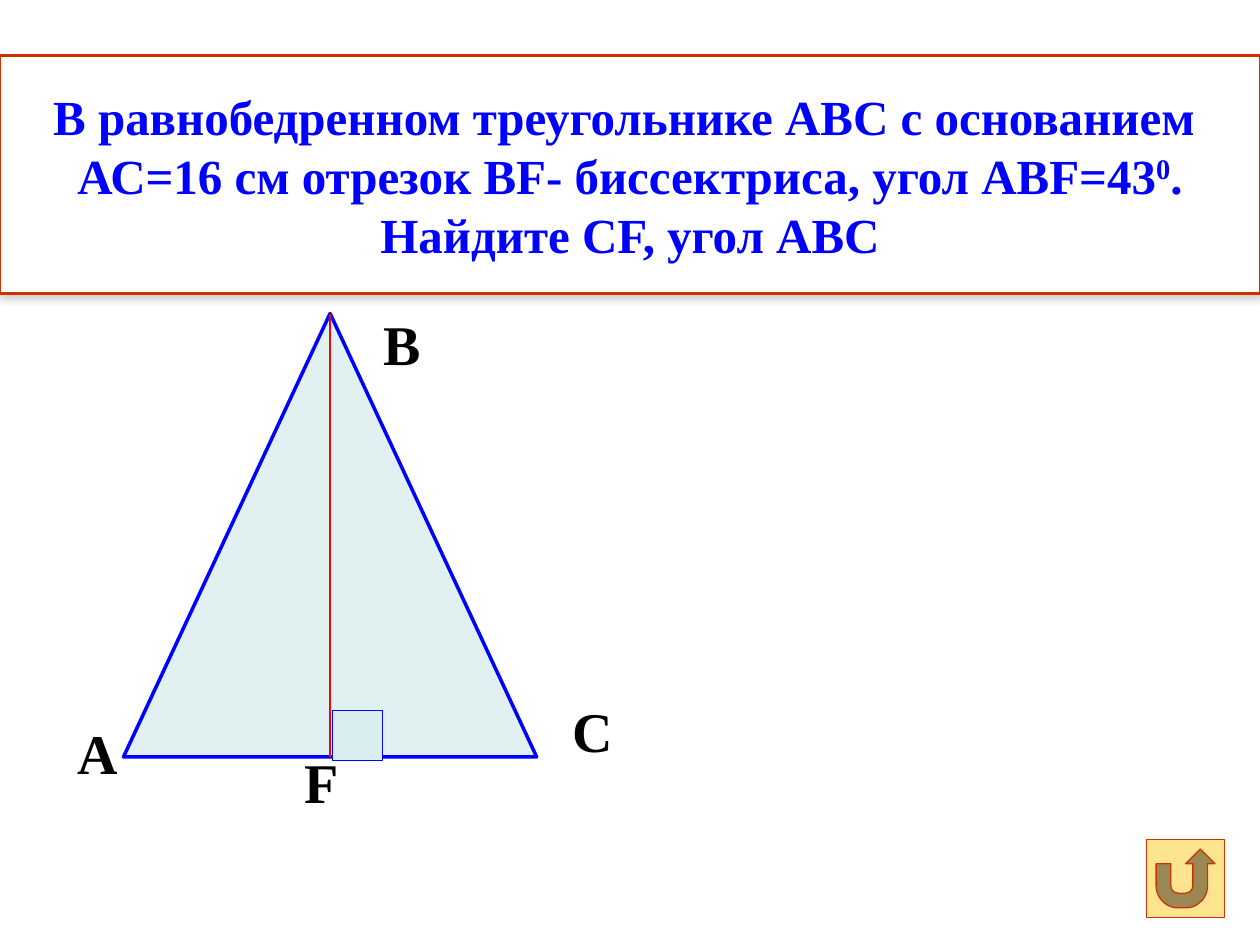
from typing import NamedTuple

from lxml.etree import SubElement
from pptx import Presentation
from pptx.dml.color import RGBColor
from pptx.enum.shapes import MSO_CONNECTOR as Connector, MSO_SHAPE as Preset
from pptx.enum.text import MSO_ANCHOR as Anchor, MSO_AUTO_SIZE as AutoSize, PP_ALIGN as Align
from pptx.oxml import parse_xml
from pptx.oxml.ns import nsdecls, qn
from pptx.util import Cm, Pt

FONT = "Times New Roman"
BLUE, RUST, RED, BLACK, WHITE = "0000FF", "CC3300", "FF0000", "000000", "FFFFFF"
SHADOW = (
    f'<a:effectLst {nsdecls("a")}><a:outerShdw blurRad="63500" dist="20320" dir="5400000" '
    'algn="ctr" rotWithShape="0"><a:srgbClr val="808080"><a:alpha val="38000"/></a:srgbClr>'
    "</a:outerShdw></a:effectLst>"
)


class Box(NamedTuple):
    left: float
    top: float
    width: float
    height: float


class Figure(NamedTuple):
    preset: Preset
    box: Box
    fill: str
    line: str
    weight: float
    opacity: int = 100


class Label(NamedTuple):
    text: str
    box: Box


TRIANGLE = Box(2.49, 6.32, 8.33, 8.94)
FIGURES = [
    Figure(Preset.ACTION_BUTTON_RETURN, Box(23.11, 16.92, 1.58, 1.58), "FFE48F", RUST, 0.75),
    Figure(Preset.ISOSCELES_TRIANGLE, TRIANGLE, "BBE0E3", BLUE, 2, 44),
]
RIGHT_ANGLE = Figure(Preset.RECTANGLE, Box(6.71, 14.33, 1, 1), "DAEDEF", BLUE, 0.75)
LABELS = [
    Label("F", Box(5.89, 14.94, 1.19, 1.63)),
    Label("С", Box(11.3, 13.92, 1.35, 1.63)),
    Label("В", Box(7.49, 6.12, 1.27, 1.63)),
    Label("А", Box(1.32, 14.35, 1.35, 1.63)),
]
PROBLEM = [
    ["В равнобедренном треугольнике АВС с основанием "],
    ["АС=16 см отрезок ВF- биссектриса, угол АВF=43", "0", "."],
    ["Найдите СF, угол АВС"],
]


def color(value: str) -> RGBColor:
    """Turn a hex string into a colour."""
    return RGBColor.from_string(value)


def paint(shape, fill: str, line: str, weight: float) -> None:
    """Give a shape a solid fill and an outline."""
    shape.fill.solid()
    shape.fill.fore_color.rgb = color(fill)
    shape.line.color.rgb = color(line)
    shape.line.width = Pt(weight)


def set_font(paragraph, size: float, value: str) -> None:
    """Set the bold serif font of a paragraph."""
    paragraph.font.name = FONT
    paragraph.font.size = Pt(size)
    paragraph.font.bold = True
    paragraph.font.color.rgb = color(value)


def write_problem(title) -> None:
    """Place and fill the framed problem statement."""
    title.left, title.top, title.width, title.height = map(Cm, Box(0, 1.12, 25.4, 4.8))
    paint(title, WHITE, RUST, 1.5)
    title._element.spPr.append(parse_xml(SHADOW))
    frame = title.text_frame
    frame.word_wrap = True
    frame.auto_size = AutoSize.NONE
    frame.vertical_anchor = Anchor.MIDDLE
    frame.margin_left = frame.margin_right = Cm(0.28)
    frame.margin_top = frame.margin_bottom = Cm(0.15)
    for index, pieces in enumerate(PROBLEM):
        paragraph = frame.paragraphs[0] if index == 0 else frame.add_paragraph()
        paragraph.alignment = Align.CENTER
        set_font(paragraph, 28, BLUE)
        for piece in pieces:
            run = paragraph.add_run()
            run.text = piece
            if piece == "0":
                run._r.get_or_add_rPr().set("baseline", "30000")


def draw_figure(slide, figure: Figure) -> None:
    """Draw one preset shape."""
    shape = slide.shapes.add_shape(figure.preset, *map(Cm, figure.box))
    shape.shadow.inherit = False
    paint(shape, figure.fill, figure.line, figure.weight)
    if figure.opacity < 100:
        fill_color = shape._element.spPr.find(qn("a:solidFill"))[0]
        SubElement(fill_color, qn("a:alpha")).set("val", str(figure.opacity * 1000))


def draw_bisector(slide, triangle: Box) -> None:
    """Draw the line from the apex to the middle of the base."""
    middle = Cm(triangle.left + triangle.width / 2)
    bottom = Cm(triangle.top + triangle.height)
    line = slide.shapes.add_connector(
        Connector.STRAIGHT, middle, Cm(triangle.top), middle, bottom
    )
    line.line.color.rgb = color(RED)
    line.line.width = Pt(1)
    SubElement(line._element.spPr, qn("a:effectLst"))


def draw_label(slide, label: Label) -> None:
    """Write the letter of one point."""
    frame = slide.shapes.add_textbox(*map(Cm, label.box)).text_frame
    frame.word_wrap = True
    paragraph = frame.paragraphs[0]
    paragraph.text = label.text
    set_font(paragraph, 32, BLACK)


def main() -> None:
    """Build the slide and save it."""
    presentation = Presentation()
    presentation.slide_width, presentation.slide_height = Cm(25.4), Cm(19.05)
    slide = presentation.slides.add_slide(presentation.slide_layouts[5])
    write_problem(slide.shapes.title)
    for figure in FIGURES:
        draw_figure(slide, figure)
    draw_bisector(slide, TRIANGLE)
    draw_figure(slide, RIGHT_ANGLE)
    for label in LABELS:
        draw_label(slide, label)
    presentation.save("out.pptx")


if __name__ == "__main__":
    main()
